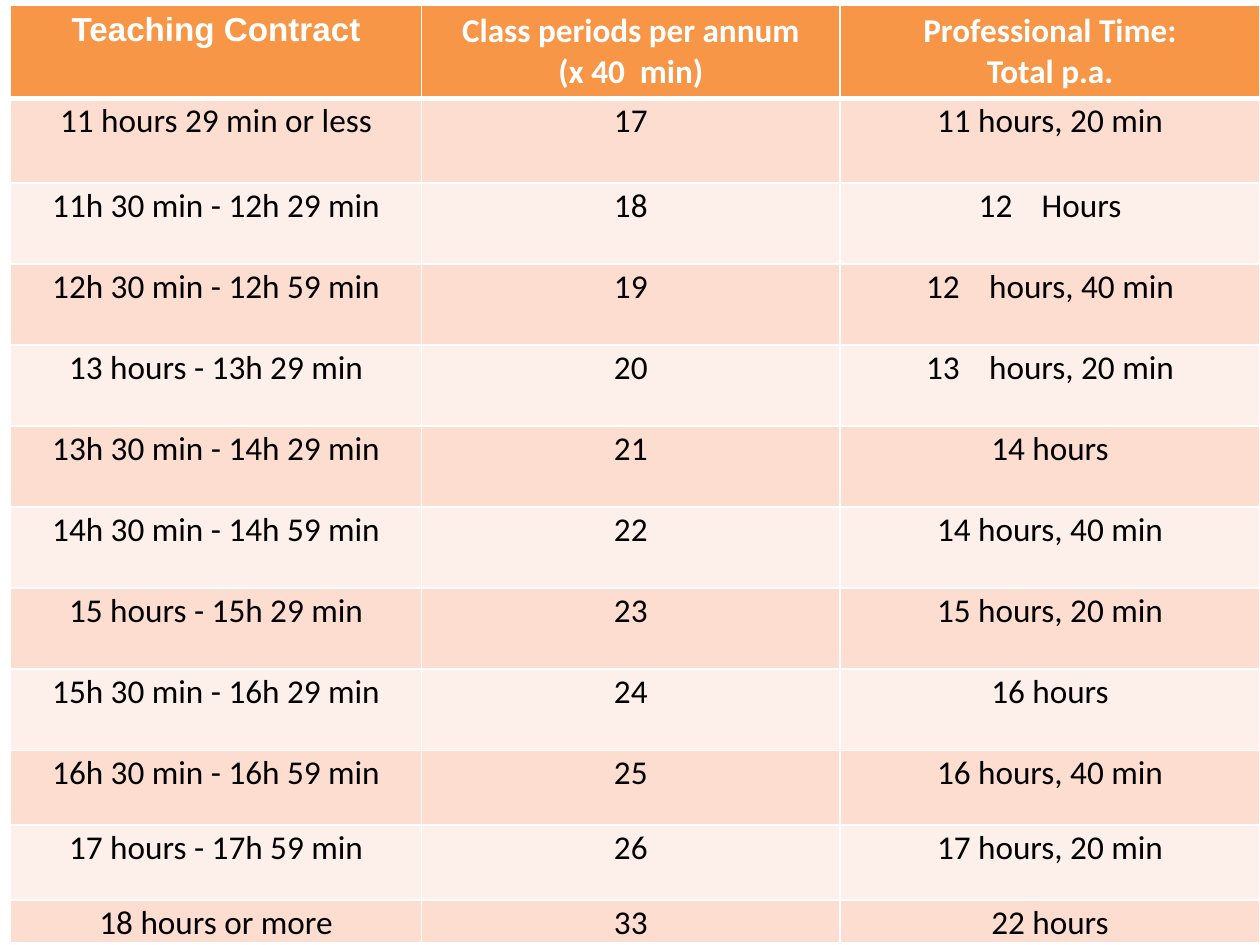
from dataclasses import dataclass

import lxml.etree
import pptx
import pptx.dml.color
import pptx.enum.text
import pptx.oxml.ns
import pptx.util

Pt = pptx.util.Pt
RGB = pptx.dml.color.RGBColor.from_string
qn = pptx.oxml.ns.qn


@dataclass(frozen=True)
class Theme:
    header: str = "F79646"
    bands: tuple = ("FCDDCF", "FDEFE9")
    white: str = "FFFFFF"
    text: str = "000000"
    font: str = "Calibri"
    title_font: str = "Arial"
    size: float = 19
    rule: float = 1
    header_rule: float = 3
    line_spacing: float = 1.07


THEME = Theme()

HEADERS = [
    ["Teaching Contract"],
    ["Class periods per annum", "(x 40  min)"],
    ["Professional Time:", "Total p.a."],
]

# contract, periods, professional time, automatic number before the time
CONTRACTS = [
    ("11 hours 29 min or less", 17, "11 hours, 20 min", None),
    ("11h 30 min - 12h 29 min", 18, "Hours", 12),
    ("12h 30 min - 12h 59 min", 19, "hours, 40 min", 12),
    ("13 hours - 13h 29 min", 20, "hours, 20 min", 13),
    ("13h 30 min - 14h 29 min", 21, "14 hours", None),
    ("14h 30 min - 14h 59 min", 22, "14 hours, 40 min", None),
    ("15 hours - 15h 29 min", 23, "15 hours, 20 min", None),
    ("15h 30 min - 16h 29 min", 24, "16 hours", None),
    ("16h 30 min - 16h 59 min", 25, "16 hours, 40 min", None),
    ("17 hours - 17h 59 min", 26, "17 hours, 20 min", None),
    ("18 hours or more", 33, "22 hours", None),
]

COLUMN_SHARES = [3.26, 3.32, 3.33]
ROW_HEIGHTS = [53, 48.5] + [46.3] * 7 + [42.8] * 2 + [24.3]


def style_cell(cell, fill, top=THEME.rule, bottom=THEME.rule):
    """Give the cell white borders and a plain fill."""
    tc_pr = cell._tc.get_or_add_tcPr()
    widths = {"a:lnL": THEME.rule, "a:lnR": THEME.rule, "a:lnT": top, "a:lnB": bottom}
    for tag, width in widths.items():
        ln = lxml.etree.SubElement(tc_pr, qn(tag), w=str(Pt(width)))
        solid = lxml.etree.SubElement(ln, qn("a:solidFill"))
        lxml.etree.SubElement(solid, qn("a:srgbClr"), val=THEME.white)
    cell.fill.solid()
    cell.fill.fore_color.rgb = RGB(fill)


def write_line(p, text, color, font=THEME.font, bold=False):
    p.alignment = pptx.enum.text.PP_ALIGN.CENTER
    r = p.add_run()
    r.text = text
    r.font.name = font
    r.font.size = Pt(THEME.size)
    r.font.bold = bold
    r.font.color.rgb = RGB(color)


def number_paragraph(p, start):
    """Number the paragraph automatically, with a hanging indent."""
    p_pr = p._p.get_or_add_pPr()
    p_pr.set("marL", str(Pt(36)))
    p_pr.set("indent", str(-Pt(36)))
    lxml.etree.SubElement(p_pr, qn("a:buFont"), typeface="+mj-lt")
    lxml.etree.SubElement(p_pr, qn("a:buAutoNum"), type="arabicPlain", startAt=str(start))


def fill_header(table):
    for column, lines in enumerate(HEADERS):
        cell = table.cell(0, column)
        style_cell(cell, THEME.header, bottom=THEME.header_rule)
        font = THEME.font if column else THEME.title_font
        tf = cell.text_frame
        for i, line in enumerate(lines):
            p = tf.add_paragraph() if i else tf.paragraphs[0]
            write_line(p, line, THEME.white, font, bold=True)


def fill_contracts(table):
    for row, (contract, periods, time, start) in enumerate(CONTRACTS, 1):
        for column, text in enumerate((contract, str(periods), time)):
            cell = table.cell(row, column)
            style_cell(cell, THEME.bands[(row - 1) % 2],
                       top=THEME.header_rule if row == 1 else THEME.rule)
            cell.margin_left = cell.margin_right = Pt(5)
            cell.margin_top = cell.margin_bottom = Pt(0)
            p = cell.text_frame.paragraphs[0]
            p.line_spacing = THEME.line_spacing
            if column == 2 and start:
                number_paragraph(p, start)
            write_line(p, text, THEME.text)


def add_contract_table(s, left, top, width, height):
    frame = s.shapes.add_table(len(ROW_HEIGHTS), len(HEADERS),
                               Pt(left), Pt(top), Pt(width), Pt(height))
    table = frame.table
    for column, share in zip(table.columns, COLUMN_SHARES):
        column.width = Pt(width * share / sum(COLUMN_SHARES))
    for row, share in zip(table.rows, ROW_HEIGHTS):
        row.height = Pt(height * share / sum(ROW_HEIGHTS))
    fill_header(table)
    fill_contracts(table)


def main():
    prs = pptx.Presentation()
    prs.slide_width, prs.slide_height = Pt(720), Pt(540)
    s = prs.slides.add_slide(prs.slide_layouts[6])
    add_contract_table(s, 6, 2.9, 714, sum(ROW_HEIGHTS))
    prs.save("out.pptx")


if __name__ == "__main__":
    main()
